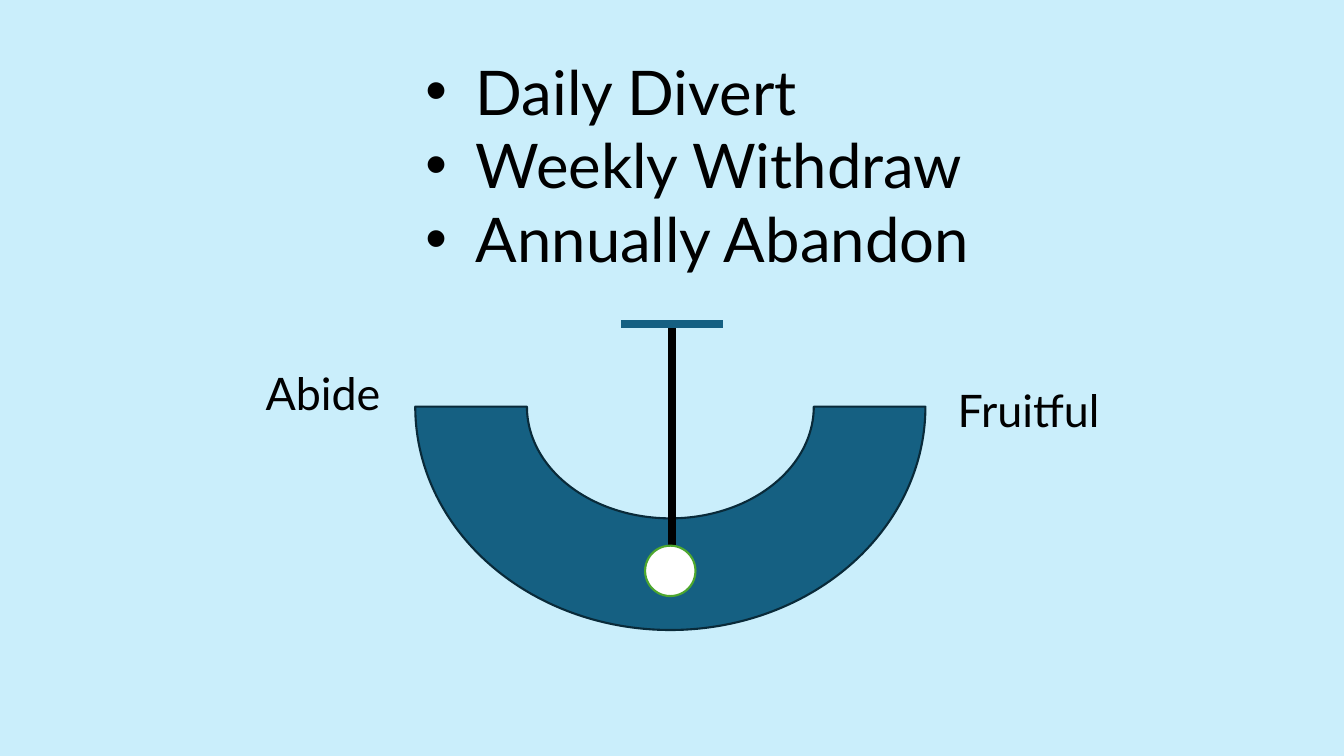
from lxml.etree import SubElement
from pptx import Presentation
from pptx.dml.color import RGBColor
from pptx.enum.shapes import MSO_CONNECTOR, MSO_SHAPE
from pptx.enum.text import MSO_ANCHOR, MSO_AUTO_SIZE
from pptx.oxml.ns import qn
from pptx.util import Pt

COLORS = {
    "sky": "CAEEFB",
    "teal": "156082",
    "navy": "092A39",
    "green": "4EA72E",
    "white": "FFFFFF",
    "black": "000000",
}


def rgb(name):
    return RGBColor.from_string(COLORS[name])


class PendulumSlide:
    font = "Lato"
    frame_format = {
        "word_wrap": True,
        "auto_size": MSO_AUTO_SIZE.NONE,
        "vertical_anchor": MSO_ANCHOR.TOP,
        "margin_left": Pt(7.2),
        "margin_right": Pt(7.2),
        "margin_top": Pt(3.6),
        "margin_bottom": Pt(3.6),
    }
    para_format = {"space_before": Pt(0), "space_after": Pt(0), "line_spacing": 1.0}

    def __init__(self, prs):
        self.s = prs.slides.add_slide(prs.slide_layouts[1])
        fill = self.s.background.fill
        fill.solid()
        fill.fore_color.rgb = rgb("sky")
        title = self.s.shapes.title.element
        title.getparent().remove(title)

    def set_text(self, sp, lines, size):
        tf = sp.text_frame
        for key, value in self.frame_format.items():
            setattr(tf, key, value)
        tf.text = "\n".join(lines)
        for p in tf.paragraphs:
            for key, value in self.para_format.items():
                setattr(p, key, value)
            font = p.runs[0].font
            for key, value in {"name": self.font, "size": Pt(size)}.items():
                setattr(font, key, value)
            font.color.rgb = rgb("black")
        return tf

    def bullets(self, box, lines, size, indent):
        sp = self.s.placeholders[1]
        for key, value in zip(("left", "top", "width", "height"), box):
            setattr(sp, key, Pt(value))
        for p in self.set_text(sp, lines, size).paragraphs:
            pPr = p._p.get_or_add_pPr()
            pPr.set("marL", str(Pt(indent)))
            pPr.set("indent", str(-Pt(indent)))
            SubElement(pPr, qn("a:buFont")).set("typeface", "Arial")
            SubElement(pPr, qn("a:buChar")).set("char", "•")

    def label(self, box, text, size):
        self.set_text(self.s.shapes.add_textbox(*map(Pt, box)), [text], size)

    def shape(self, kind, box, fill, line, rotation=0):
        sp = self.s.shapes.add_shape(kind, *map(Pt, box))
        sp.rotation = rotation
        sp.shadow.inherit = False
        sp.fill.solid()
        sp.fill.fore_color.rgb = rgb(fill)
        sp.line.color.rgb = rgb(line)
        sp.line.width = Pt(1.5)

    def line(self, ends, color):
        cxn = self.s.shapes.add_connector(MSO_CONNECTOR.STRAIGHT, *map(Pt, ends))
        cxn.line.color.rgb = rgb(color)
        cxn.line.width = Pt(6)
        SubElement(cxn._element.spPr, qn("a:effectLst"))


def main():
    prs = Presentation()
    prs.slide_width, prs.slide_height = Pt(960), Pt(540)
    slide = PendulumSlide(prs)

    # Rhythms of rest
    rhythms = ["Daily Divert", "Weekly Withdraw", "Annually Abandon"]
    slide.bullets((296.6, 34.6, 476.6, 167), rhythms, 44, 36)

    # Pendulum: arc, rod, pivot bar and bob
    slide.shape(MSO_SHAPE.BLOCK_ARC, (296.6, 131, 364.4, 319), "teal", "navy", 180)
    slide.line((480, 230.4, 480, 401.8), "black")
    slide.line((443.6, 231.6, 516.4, 231.6), "teal")
    slide.shape(MSO_SHAPE.FLOWCHART_CONNECTOR, (460.8, 389.8, 36, 36), "white", "green")

    # Ends of the swing
    slide.label((182.6, 257.8, 104, 46), "Abide", 32)
    slide.label((677, 270, 134, 46), "Fruitful", 32)

    prs.save("out.pptx")


if __name__ == "__main__":
    main()
